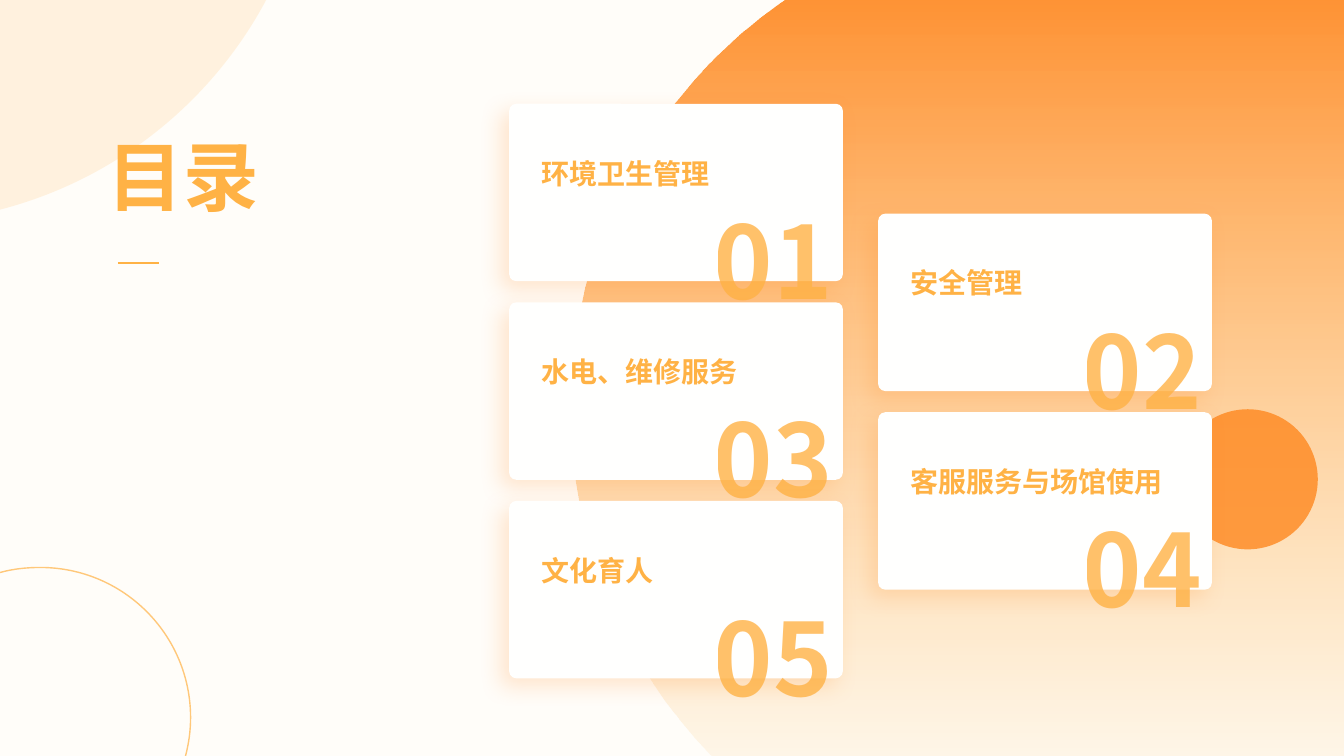
from dataclasses import dataclass
from itertools import pairwise
from math import atan2, remainder, tan, tau

from lxml.etree import SubElement
from pptx import Presentation
from pptx.dml.color import RGBColor
from pptx.enum.shapes import MSO_CONNECTOR, MSO_SHAPE
from pptx.enum.text import MSO_ANCHOR, PP_ALIGN
from pptx.oxml.ns import qn
from pptx.util import Inches, Pt


@dataclass(frozen=True)
class Theme:
    """Colours, font and type sizes of the slide."""
    paper: str = "FFFDF9"
    card: str = "FFFFFE"
    amber: str = "FFB245"
    orange: str = "FF881F"
    font: str = "Noto Sans CJK SC"
    title: int = 54
    label: int = 20
    number: int = 72


T = Theme()
WIDTH, HEIGHT = 13.33, 7.5
TOPICS = ["环境卫生管理", "安全管理", "水电、维修服务", "客服服务与场馆使用", "文化育人"]


def rgb(color):
    """Return a hex string as a colour."""
    return RGBColor.from_string(color)


def set_alpha(element, *percents):
    """Give the colours inside an element their opacities in order."""
    for c, percent in zip(element.iter(qn("a:srgbClr")), percents):
        if percent < 100:
            SubElement(c, qn("a:alpha"), val=str(percent * 1000))


def fill_shape(s, color, alpha=100):
    """Fill a shape plainly, without line or shadow."""
    s.shadow.inherit = False
    s.fill.solid()
    s.fill.fore_color.rgb = rgb(color)
    s.line.fill.background()
    set_alpha(s.element.spPr, alpha)


def write(s, text, size, anchor, align=None, inset=None, alpha=100):
    """Write one bold amber line into a shape."""
    tf = s.text_frame
    tf.word_wrap = True
    tf.vertical_anchor = anchor
    if inset is not None:
        tf.margin_left = tf.margin_right = Inches(inset)
        tf.margin_top = tf.margin_bottom = Inches(inset)
    p = tf.paragraphs[0]
    p.alignment = align or PP_ALIGN.LEFT
    r = p.add_run()
    r.text = text
    r.font.size = Pt(size)
    r.font.bold = True
    r.font.color.rgb = rgb(T.amber)
    r.font.name = T.font
    rPr = next(s.element.iter(qn("a:rPr")))
    set_alpha(rPr, alpha)
    SubElement(rPr, qn("a:ea"), typeface=T.font)


def add_text(slide, box, text, size, anchor, **fmt):
    """Add a text box with one formatted line."""
    s = slide.shapes.add_textbox(*map(Inches, box))
    write(s, text, size, anchor, **fmt)


def arc(center, *stops):
    """List the Bezier control points of a circle through the stops."""
    cx, cy = center
    points = []
    for (x1, y1), (x2, y2) in pairwise(stops):
        sweep = remainder(atan2(y2 - cy, x2 - cx) - atan2(y1 - cy, x1 - cx), tau)
        k = 4 / 3 * tan(sweep / 4)
        points += [(x1 - k * (y1 - cy), y1 + k * (x1 - cx)),
                   (x2 + k * (y2 - cy), y2 - k * (x2 - cx)), (x2, y2)]
    return points


def add_outline(slide, center, stops, corners=()):
    """Draw an arc through the stops, closed by way of any corners."""
    curve = arc(center, *stops)
    points = [(Inches(x), Inches(y)) for x, y in [stops[0], *curve, *corners]]
    fb = slide.shapes.build_freeform(*points[0])
    fb.add_line_segments(points[1:], close=bool(corners))
    s = fb.convert_to_shape()
    s.shadow.inherit = False
    path = next(s.element.iter(qn("a:path")))
    lines = path.findall(qn("a:lnTo"))[:len(curve)]
    for i in range(0, len(lines), 3):
        bezier = path.makeelement(qn("a:cubicBezTo"))
        lines[i].addprevious(bezier)
        for line in lines[i:i + 3]:
            bezier.append(line[0])
            path.remove(line)
    return s


def add_backdrop(slide, width, height):
    """Draw the circles cut off by the slide edges."""
    slide.background.fill.solid()
    slide.background.fill.fore_color.rgb = rgb(T.paper)

    s = add_outline(slide, (10.59, 4.06), [(7.06, height), (5.66, 4.06), (7.79, 0)],
                    [(width, 0), (width, height)])
    s.fill.gradient()
    s.fill.gradient_angle = 270
    for stop, color in zip(s.fill.gradient_stops, (T.orange, T.amber)):
        stop.color.rgb = rgb(color)
    set_alpha(s.element.spPr, 90, 10)
    s.line.fill.background()

    dot = map(Inches, (11.68, 4.06, 1.39, 1.39))
    fill_shape(slide.shapes.add_shape(MSO_SHAPE.OVAL, *dot), T.orange, 80)

    corner = add_outline(slide, (-1.05, -1.97), [(2.64, 0), (0, 2.08)], [(0, 0)])
    fill_shape(corner, T.amber, 15)

    ring = add_outline(slide, (0.4, 7.12),
                       [(0, 5.68), (0.4, 5.63), (1.89, 7.12), (1.84, height)])
    ring.fill.background()
    ring.line.color.rgb = rgb(T.amber)
    ring.line.width = Pt(1)
    set_alpha(ring.element.spPr, 70)


def add_title(slide, left, top, width, height):
    """Place the title with a short rule below it."""
    x, y = left + 0.2, top + height + 0.37
    ends = map(Inches, (x, y, x + 0.41, y))
    rule = slide.shapes.add_connector(MSO_CONNECTOR.STRAIGHT, *ends)
    rule.line.color.rgb = rgb(T.amber)
    rule.line.width = Pt(1.5)
    SubElement(rule.element.spPr, qn("a:effectLst"))

    s = slide.shapes.title
    s.left, s.top, s.width, s.height = map(Inches, (left, top, width, height))
    write(s, "目录", T.title, MSO_ANCHOR.BOTTOM)
    s.element.getparent().append(s.element)


def add_card(slide, left, top, width, height, number, topic):
    """Draw one topic card with its overhanging number."""
    box = map(Inches, (left, top, width, height))
    s = slide.shapes.add_shape(MSO_SHAPE.ROUNDED_RECTANGLE, *box)
    s.adjustments[0] = 0.04
    fill_shape(s, T.card)
    shadow = SubElement(s.element.spPr.find(qn("a:effectLst")), qn("a:outerShdw"),
                        blurRad=str(Pt(16)), dist=str(Pt(8)), dir=str(135 * 60000),
                        algn="tr", rotWithShape="0")
    SubElement(shadow, qn("a:srgbClr"), val=T.orange)
    set_alpha(shadow, 20)
    add_text(slide, (left + 1.72, top + 0.79, 1.8, 1.35), f"{number:02}", T.number,
             MSO_ANCHOR.BOTTOM, align=PP_ALIGN.CENTER, inset=0, alpha=80)
    add_text(slide, (left + 0.22, top + 0.16, 2.73, 1.05), topic, T.label,
             MSO_ANCHOR.MIDDLE)


def add_cards(slide, left, top):
    """Stagger the topic cards over two columns."""
    for i, topic in enumerate(TOPICS):
        row, col = divmod(i, 2)
        add_card(slide, left + 3.66 * col, top + 1.97 * row + 1.09 * col,
                 3.31, 1.76, i + 1, topic)


def main():
    """Build the contents slide and save it."""
    prs = Presentation()
    prs.slide_width, prs.slide_height = Inches(WIDTH), Inches(HEIGHT)
    slide = prs.slides.add_slide(prs.slide_layouts[5])
    add_backdrop(slide, WIDTH, HEIGHT)
    add_title(slide, 0.97, 0.69, 3.23, 1.55)
    add_cards(slide, 5.05, 1.03)
    prs.save("out.pptx")


if __name__ == "__main__":
    main()
